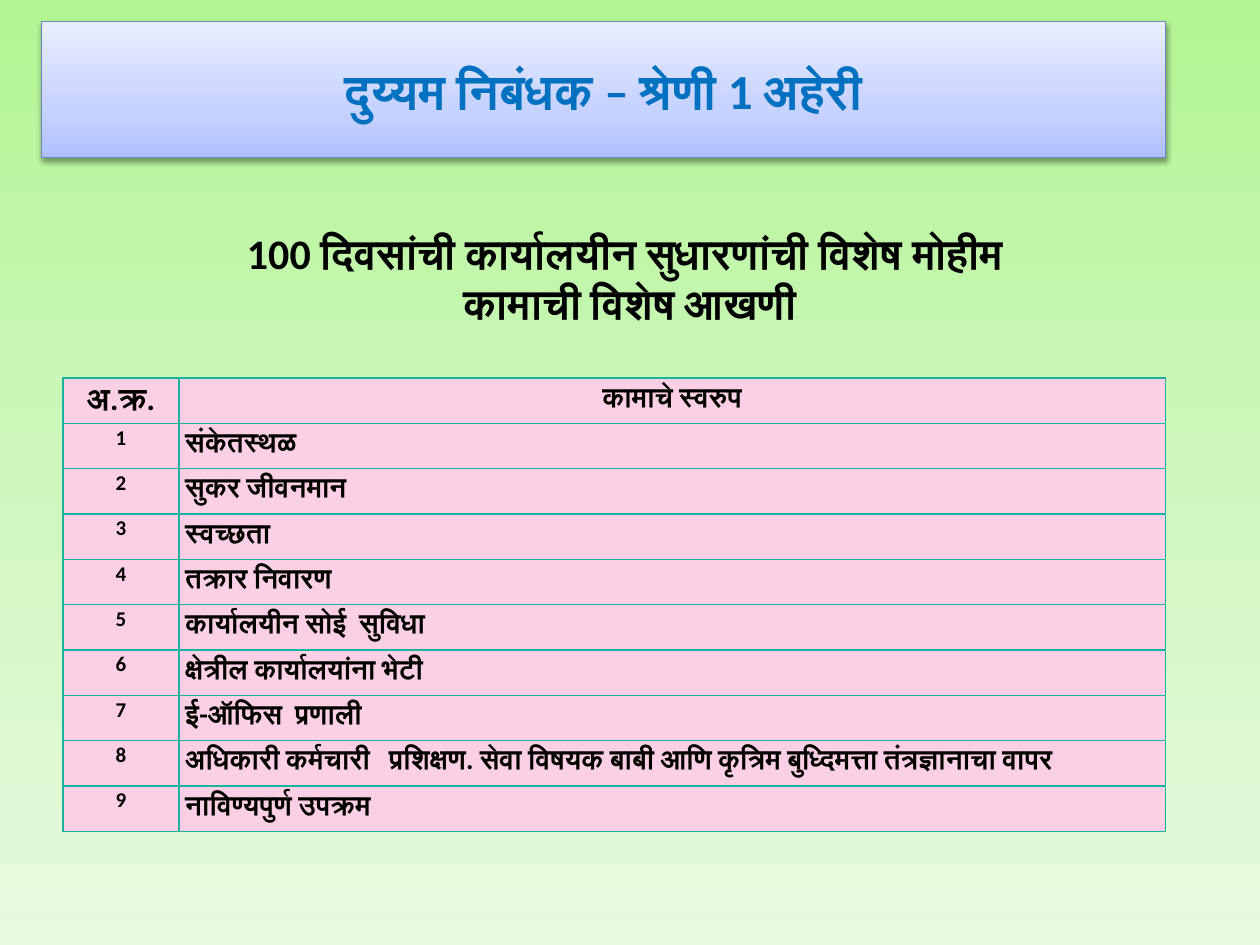
"""Build the slide that lists the nine tasks of the 100-day office drive."""
from dataclasses import dataclass

from lxml.etree import SubElement
from pptx import Presentation
from pptx.dml.color import RGBColor
from pptx.enum.shapes import MSO_SHAPE
from pptx.enum.text import MSO_ANCHOR, PP_ALIGN
from pptx.oxml.ns import qn
from pptx.util import Inches, Pt


@dataclass(frozen=True)
class Theme:
    font: str = "Calibri"
    ink: str = "000000"
    title: str = "0070C0"
    edge: str = "6E86C6"
    cell: str = "FBD0E4"
    grid: str = "1AB39F"
    page: tuple = ((0, "B2F592"), (50, "CEF7BD"), (100, "E7FADF"))
    band: tuple = ((0, "B0C1FF"), (35, "C6D2FF"), (100, "E9EEFF"))
    title_size: int = 28
    lead_size: int = 24
    head_size: int = 18
    task_size: int = 16
    num_size: int = 12


THEME = Theme()
TITLE = "दुय्यम निबंधक – श्रेणी 1 अहेरी"
LEAD = "100 दिवसांची कार्यालयीन सुधारणांची विशेष मोहीम \nकामाची विशेष आखणी"
HEADS = ("अ.क्र.", "कामाचे स्वरुप")
TASKS = (
    "संकेतस्थळ",
    "सुकर जीवनमान",
    "स्वच्छता",
    "तक्रार निवारण",
    "कार्यालयीन सोई  सुविधा",
    "क्षेत्रील कार्यालयांना भेटी",
    "ई-ऑफिस  प्रणाली",
    "अधिकारी कर्मचारी   प्रशिक्षण. सेवा विषयक बाबी आणि कृत्रिम बुध्दिमत्ता तंत्रज्ञानाचा वापर",
    "नाविण्यपुर्ण उपक्रम",
)


def add_color(parent, color):
    return SubElement(parent, qn("a:srgbClr"), val=color)


def set_blend(fill, root, stops, angle):
    fill.gradient()
    fill.gradient_angle = angle
    stop_list = root.find(".//" + qn("a:gsLst"))
    for old in list(stop_list):
        stop_list.remove(old)
    for place, color in stops:
        add_color(SubElement(stop_list, qn("a:gs"), pos=str(place * 1000)), color)


def set_text(frame, text, size, color=THEME.ink, align=PP_ALIGN.CENTER, space=None):
    frame.text = text
    frame.word_wrap = True
    for para in frame.paragraphs:
        para.alignment = align
        para.line_spacing = space
        for run in para.runs:
            font = run.font
            font.name, font.size, font.bold = THEME.font, Pt(size), True
            font.color.rgb = RGBColor.from_string(color)
            SubElement(font._element, qn("a:cs"), typeface=THEME.font)


def add_shadow(shape):
    shape.shadow.inherit = False
    effects = shape.element.spPr.find(qn("a:effectLst"))
    shadow = SubElement(effects, qn("a:outerShdw"), blurRad=str(Pt(3.1)),
                        dist=str(Pt(1.6)), dir="5400000", rotWithShape="0")
    SubElement(add_color(shadow, THEME.ink), qn("a:alpha"), val="38000")


def add_title(slide):
    band = slide.shapes.add_shape(MSO_SHAPE.RECTANGLE, Inches(0.33), Inches(0.17),
                                  Inches(8.92), Inches(1.08))
    set_blend(band.fill, band.element, THEME.band, 90)
    band.line.color.rgb = RGBColor.from_string(THEME.edge)
    band.line.width = Pt(0.75)
    add_shadow(band)
    set_text(band.text_frame, TITLE, THEME.title_size, THEME.title)
    band.text_frame.vertical_anchor = MSO_ANCHOR.MIDDLE


def add_lead(slide):
    box = slide.shapes.add_textbox(0, Inches(1.75), Inches(10), Inches(0.91))
    set_text(box.text_frame, LEAD, THEME.lead_size)
    box.text_frame.vertical_anchor = MSO_ANCHOR.MIDDLE


def set_cell(cell, text, size, align=PP_ALIGN.CENTER):
    cell.margin_left = cell.margin_right = Inches(0.05)
    cell.margin_top = cell.margin_bottom = 0
    set_text(cell.text_frame, text, size, align=align, space=1.07)
    props = cell._tc.get_or_add_tcPr()
    for side in ("a:lnL", "a:lnR", "a:lnT", "a:lnB"):
        line = SubElement(props, qn(side), w=str(Pt(1)))
        add_color(SubElement(line, qn("a:solidFill")), THEME.grid)
    cell.fill.solid()
    cell.fill.fore_color.rgb = RGBColor.from_string(THEME.cell)


def add_tasks(slide):
    count = len(TASKS) + 1
    table = slide.shapes.add_table(count, 2, Inches(0.5), Inches(3),
                                   Inches(8.75), Inches(0.36) * count).table
    for col, width in zip(table.columns, (0.92, 7.83)):
        col.width = Inches(width)
    set_cell(table.cell(0, 0), HEADS[0], THEME.head_size)
    set_cell(table.cell(0, 1), HEADS[1], THEME.task_size)
    for row, task in enumerate(TASKS, 1):
        set_cell(table.cell(row, 0), str(row), THEME.num_size)
        set_cell(table.cell(row, 1), task, THEME.task_size, PP_ALIGN.LEFT)


def main():
    deck = Presentation()
    deck.slide_width, deck.slide_height = Inches(10), Inches(7.5)
    slide = deck.slides.add_slide(deck.slide_layouts[6])
    set_blend(slide.background.fill, slide.element, THEME.page, 270)
    add_title(slide)
    add_lead(slide)
    add_tasks(slide)
    deck.save("out.pptx")


if __name__ == "__main__":
    main()
